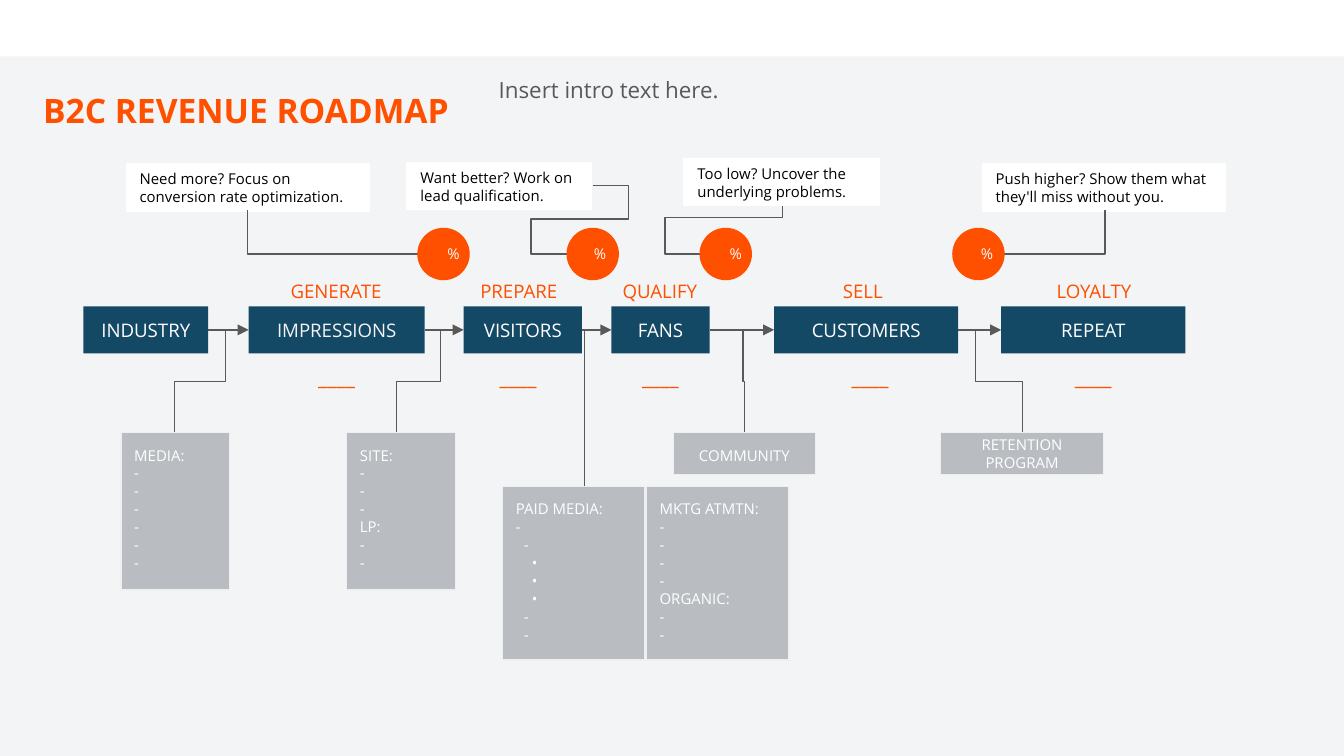
from dataclasses import dataclass
from itertools import pairwise

from lxml.etree import SubElement
from pptx import Presentation
from pptx.dml.color import RGBColor
from pptx.enum.shapes import MSO_CONNECTOR as Link, MSO_SHAPE as Preset
from pptx.enum.text import MSO_ANCHOR as Anchor, MSO_AUTO_SIZE as AutoSize, PP_ALIGN as Align
from pptx.oxml.ns import qn
from pptx.util import Inches, Pt


@dataclass(frozen=True)
class Theme:
    font: str = "Open Sans"
    orange: str = "FF5000"
    navy: str = "134965"
    grey: str = "B9BDC2"
    edge: str = "EFEFEF"
    ink: str = "595959"
    band: str = "F3F4F5"
    white: str = "FFFFFF"
    pale: str = "F3F3F3"
    black: str = "000000"
    title: float = 18
    intro: float = 12
    blank: float = 11
    stage: float = 10
    small: float = 8
    line: float = 0.75


THEME = Theme()
BAND_TOP = 0.42
STAGE_TOP, STAGE_HEIGHT = 2.28, 0.35
CIRCLE_TOP, CIRCLE_SIZE = 1.7, 0.38
LEVEL_INDENT = 0.06

STAGES = [
    ("INDUSTRY", 0.62, 0.93, THEME.white),
    ("IMPRESSIONS", 1.85, 1.31, THEME.pale),
    ("VISITORS", 3.45, 0.88, THEME.white),
    ("FANS", 4.55, 0.73, THEME.white),
    ("CUSTOMERS", 5.76, 1.37, THEME.white),
    ("REPEAT", 7.45, 1.37, THEME.white),
]
CAPTIONS = [("GENERATE", 1.97), ("PREPARE", 3.33), ("QUALIFY", 4.38), ("SELL", 5.89), ("LOYALTY", 7.61)]
BLANKS = [(1.85, 1.31), (3.45, 0.81), (4.55, 0.73), (5.79, 1.37), (7.45, 1.37)]
NOTES = [
    ("Need more? Focus on conversion rate optimization.", 0.94, 1.22, 1.81),
    ("Want better? Work on lead qualification.", 3.03, 1.21, 1.37),
    ("Too low? Uncover the underlying problems.", 5.09, 1.18, 1.45),
    ("Push higher? Show them what they'll miss without you.", 7.31, 1.22, 1.81),
]
NOTE_LINKS = [
    ((3.11, 1.89), (1.84, 1.56), "bentConnector2", ()),
    ((4.22, 1.89), (4.41, 1.38), "bentConnector5", (-1.41, 0.51, 2.41)),
    ((5.21, 1.89), (5.82, 1.53), "bentConnector4", (-0.43, 0.76)),
    ((7.47, 1.89), (8.22, 1.56), "bentConnector2", ()),
]
RATES = [(3.11, 3.23), (4.22, 4.32), (5.21, 5.33), (7.09, 7.2)]
TACTIC_LINKS = [(1.3, 1.68), (2.95, 3.28), (5.54, 5.53), (7.61, 7.26)]
LISTS = [
    (["MEDIA:"] + ["-"] * 6, (0.9, 3.22, 0.81, 1.17)),
    (["SITE:", "-", "-", "-", "LP:", "-", "-"], (2.58, 3.22, 0.81, 1.17)),
    (["MKTG ATMTN:", "-", "-", "-", "-", "ORGANIC:", "-", "-"], (4.81, 3.62, 1.06, 1.29)),
]
PAID_MEDIA = ["PAID MEDIA:", "-", "-", "•", "•", "•", "-", "-"]
PAID_LEVELS = [0, 0, 1, 2, 2, 2, 1, 1]


def rgb(color):
    return RGBColor.from_string(color)


def write(shape, lines, size, color, align=Align.LEFT, anchor=Anchor.MIDDLE, bold=False):
    frame = shape.text_frame
    frame.word_wrap = True
    frame.auto_size = AutoSize.NONE
    frame.vertical_anchor = anchor
    frame.margin_left = frame.margin_right = frame.margin_top = frame.margin_bottom = Inches(0.1)
    frame.text = "\n".join(lines)
    for paragraph in frame.paragraphs:
        paragraph.alignment = align
        paragraph.space_before = Pt(0)
        for span in paragraph.runs:
            span.font.name = THEME.font
            span.font.size = Pt(size)
            span.font.bold = bold
            span.font.color.rgb = rgb(color)


def indent(shape, levels):
    for level, paragraph in zip(levels, shape.text_frame.paragraphs):
        paragraph._p.get_or_add_pPr().set("marL", str(Inches(level * LEVEL_INDENT)))


def fill_placeholder(holder, area, text, size, color, anchor, bold=False):
    holder.left, holder.top, holder.width, holder.height = map(Inches, area)
    write(holder, [text], size, color, anchor=anchor, bold=bold)


def add_block(page, area, fill, edge=None, preset=Preset.RECTANGLE):
    block = page.shapes.add_shape(preset, *map(Inches, area))
    block.shadow.inherit = False
    block.fill.solid()
    block.fill.fore_color.rgb = rgb(fill)
    if edge:
        block.line.color.rgb = rgb(edge)
        block.line.width = Pt(THEME.line)
    else:
        block.line.fill.background()
    return block


def add_label(page, area, text, size, color, align=Align.CENTER):
    label = page.shapes.add_textbox(*map(Inches, area))
    write(label, [text], size, color, align)


def add_line(page, kind, begin, end):
    line = page.shapes.add_connector(kind, *map(Inches, begin + end))
    line.line.color.rgb = rgb(THEME.ink)
    line.line.width = Pt(THEME.line)
    SubElement(line.element.spPr, qn("a:effectLst"))
    return line


def add_arrow(page, source, target):
    arrow = add_line(page, Link.STRAIGHT, (0, 0), (1, 0))
    arrow.begin_connect(source, 3)
    arrow.end_connect(target, 1)
    SubElement(arrow.get_or_add_ln(), qn("a:tailEnd")).set("type", "triangle")


def add_elbow(page, begin, end, preset="bentConnector3", bends=(0.5,), upright=False):
    rightward = end[0] > begin[0]
    width, height = abs(end[0] - begin[0]), abs(end[1] - begin[1])
    center_x, center_y = (begin[0] + end[0]) / 2, (begin[1] + end[1]) / 2
    if upright:
        width, height = height, width
        turn, flip = (270, False) if rightward else (90, True)
    else:
        turn, flip = 180, rightward
    corner = (center_x - width / 2, center_y - height / 2)
    elbow = add_line(page, Link.ELBOW, corner, (corner[0] + width, corner[1] + height))
    properties = elbow.element.spPr
    frame = properties.find(qn("a:xfrm"))
    frame.set("rot", str(turn * 60000))
    if flip:
        frame.set("flipH", "1")
    geometry = properties.find(qn("a:prstGeom"))
    geometry.set("prst", preset)
    guides = geometry.find(qn("a:avLst"))
    for number, bend in enumerate(bends, 1):
        guide = SubElement(guides, qn("a:gd"))
        guide.set("name", f"adj{number}")
        guide.set("fmla", f"val {round(bend * 100000)}")


def add_tactic(page, lines, area, align=Align.LEFT, anchor=Anchor.TOP):
    block = add_block(page, area, THEME.grey, THEME.edge)
    write(block, lines, THEME.small, THEME.white, align, anchor)
    return block


def add_stages(page):
    blocks = []
    for name, left, width, color in STAGES:
        block = add_block(page, (left, STAGE_TOP, width, STAGE_HEIGHT), THEME.navy)
        write(block, [name], THEME.stage, color, Align.CENTER)
        blocks.append(block)
    for source, target in pairwise(blocks):
        add_arrow(page, source, target)
    for caption, left in CAPTIONS:
        add_label(page, (left, 2.05, 1.06, 0.23), caption, THEME.stage, THEME.orange)
    for left, width in BLANKS:
        add_label(page, (left, 2.67, width, 0.27), "____", THEME.blank, THEME.orange)


def add_rates(page):
    for text, left, top, width in NOTES:
        note = add_block(page, (left, top, width, 0.35), THEME.white, THEME.white)
        write(note, [text], THEME.small, THEME.black)
    for begin, end, preset, bends in NOTE_LINKS:
        add_elbow(page, begin, end, preset, bends)
    for left, text_left in RATES:
        area = (left, CIRCLE_TOP, CIRCLE_SIZE, CIRCLE_SIZE)
        add_block(page, area, THEME.orange, THEME.orange, Preset.OVAL)
        add_label(page, (text_left, 1.75, 0.38, 0.27), "%", THEME.small, THEME.white, Align.LEFT)


def add_tactics(page):
    for start, finish in TACTIC_LINKS:
        add_elbow(page, (start, 3.22), (finish, 2.46), upright=True)
    add_line(page, Link.STRAIGHT, (4.35, 3.78), (4.35, 2.46))
    for lines, area in LISTS:
        add_tactic(page, lines, area)
    indent(add_tactic(page, PAID_MEDIA, (3.74, 3.62, 1.06, 1.29)), PAID_LEVELS)
    add_tactic(page, ["COMMUNITY"], (5.01, 3.22, 1.06, 0.31), Align.CENTER)
    add_tactic(page, ["RETENTION PROGRAM"], (7, 3.22, 1.21, 0.31), Align.CENTER, Anchor.MIDDLE)


def main():
    deck = Presentation()
    deck.slide_width = Inches(10)
    deck.slide_height = deck.slide_width * 9 // 16
    page = deck.slides.add_slide(deck.slide_layouts[0])
    band_height = deck.slide_height / Inches(1) - BAND_TOP
    band = add_block(page, (0, BAND_TOP, 10, band_height), THEME.band).element
    band.getparent().insert(2, band)
    title, intro = page.placeholders
    fill_placeholder(title, (0.22, 0.53, 7.5, 0.54), "B2C REVENUE ROADMAP",
                     THEME.title, THEME.orange, Anchor.BOTTOM, True)
    title.text_frame.paragraphs[0].line_spacing = 0.9
    fill_placeholder(intro, (3.61, 0.47, 6.38, 0.44), "Insert intro text here.",
                     THEME.intro, THEME.ink, Anchor.TOP)
    add_stages(page)
    add_tactics(page)
    add_rates(page)
    deck.save("out.pptx")


if __name__ == "__main__":
    main()
